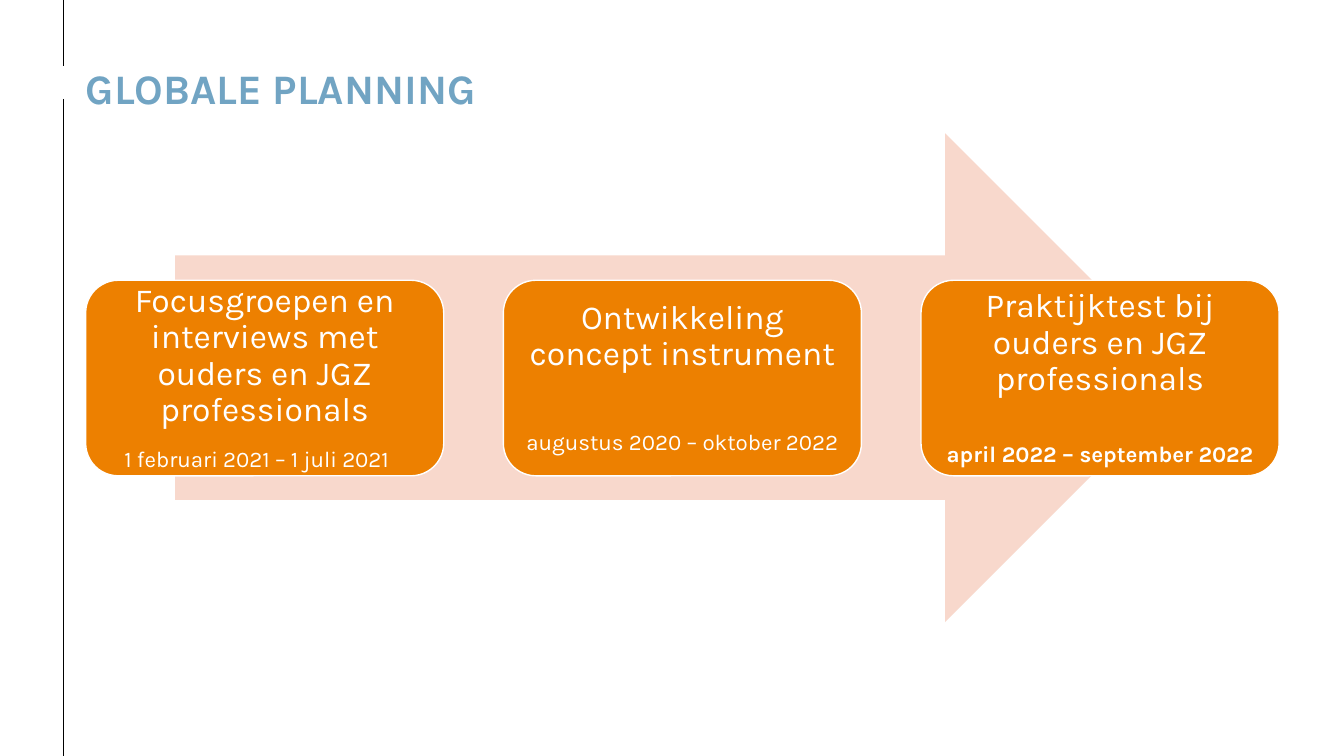
from pptx import Presentation
from pptx.dml.color import RGBColor
from pptx.enum.shapes import MSO_CONNECTOR, MSO_SHAPE
from pptx.enum.text import MSO_ANCHOR, MSO_AUTO_SIZE, PP_ALIGN
from pptx.oxml.ns import qn
from pptx.util import Pt
from lxml import etree

LEFT, CENTER = PP_ALIGN.LEFT, PP_ALIGN.CENTER
MIDDLE = MSO_ANCHOR.MIDDLE

# Content
TITLE = "GLOBALE PLANNING"
# step, date, gap above date, right indent of date, bold date
STEPS = [
    ("Focusgroepen en interviews met ouders en JGZ professionals",
     "1 februari 2021 – 1 juli 2021", 14, 11.5, False),
    ("Ontwikkeling concept instrument",
     "augustus 2020 – oktober 2022", 42, 0, False),
    ("Praktijktest bij ouders en JGZ professionals",
     "april 2022 – september 2022", 32.5, 0, True),
]
RULES = [(0, 46.8), (70.56, 540)]  # top and bottom of each margin line
COLORS = {"title": "71A4C3", "arrow": "F8D8CC", "card": "ED8000",
          "white": "FFFFFF", "rule": "000000"}
FONT = "Karla"

# Layout
EDGE, WIDE = 61.2, 852.48
CARD_W, CARD_H, CARD_Y = 255.8, 139.7, 200.2
STEP_X = (WIDE - CARD_W) / (len(STEPS) - 1)
RULE_X = 45.36


def color(name):
    return RGBColor.from_string(COLORS[name])


def style(para, size, tint, bold=False, align=CENTER):
    para.alignment = align
    para.line_spacing = 0.9
    for run in para.runs:
        font = run.font
        font.name, font.size, font.bold = FONT, Pt(size), bold
        font.color.rgb = color(tint)


def inset(frame, left, top, right, bottom):
    frame.margin_left, frame.margin_top = Pt(left), Pt(top)
    frame.margin_right, frame.margin_bottom = Pt(right), Pt(bottom)
    frame.word_wrap = True
    frame.vertical_anchor = MIDDLE


def block(kind, x, y, w, h, fill):
    shape = slide.shapes.add_shape(kind, Pt(x), Pt(y), Pt(w), Pt(h))
    shape.shadow.inherit = False
    shape.fill.solid()
    shape.fill.fore_color.rgb = color(fill)
    shape.line.fill.background()
    return shape


deck = Presentation()
deck.slide_width, deck.slide_height = Pt(960), Pt(540)
slide = deck.slides.add_slide(deck.slide_layouts[5])

# Margin lines
for top, end in RULES:
    rule = slide.shapes.add_connector(
        MSO_CONNECTOR.STRAIGHT, Pt(RULE_X), Pt(top), Pt(RULE_X), Pt(end))
    rule.line.color.rgb = color("rule")
    rule.line.width = Pt(0.57)
    etree.SubElement(rule._element.spPr, qn("a:effectLst"))

# Title
title = slide.shapes.title
title.left, title.top = Pt(EDGE), Pt(51.84)
title.width, title.height = Pt(WIDE), Pt(20.88)
frame = title.text_frame
frame.text = TITLE
frame.auto_size = MSO_AUTO_SIZE.NONE
inset(frame, 0, 5, 0, 0)
style(frame.paragraphs[0], 30, "title", True, LEFT)

# Arrow behind the steps
block(MSO_SHAPE.RIGHT_ARROW, 125.1, 95.2, 724.6, 349.2, "arrow")

# Step cards
for i, (step, date, gap, indent, bold) in enumerate(STEPS):
    card = block(MSO_SHAPE.ROUNDED_RECTANGLE, EDGE + i * STEP_X, CARD_Y,
                 CARD_W, CARD_H, "card")
    card.line.color.rgb = color("white")
    card.line.width = Pt(1)
    frame = card.text_frame
    frame.text = step
    inset(frame, 7.2, 7.2, 7.2, 7.2)
    style(frame.paragraphs[0], 24, "white")
    when = frame.add_paragraph()
    when.text = date
    when.space_before = Pt(gap)
    style(when, 16, "white", bold)
    if indent:
        when._p.get_or_add_pPr().set("marR", str(Pt(indent)))

deck.save("out.pptx")
